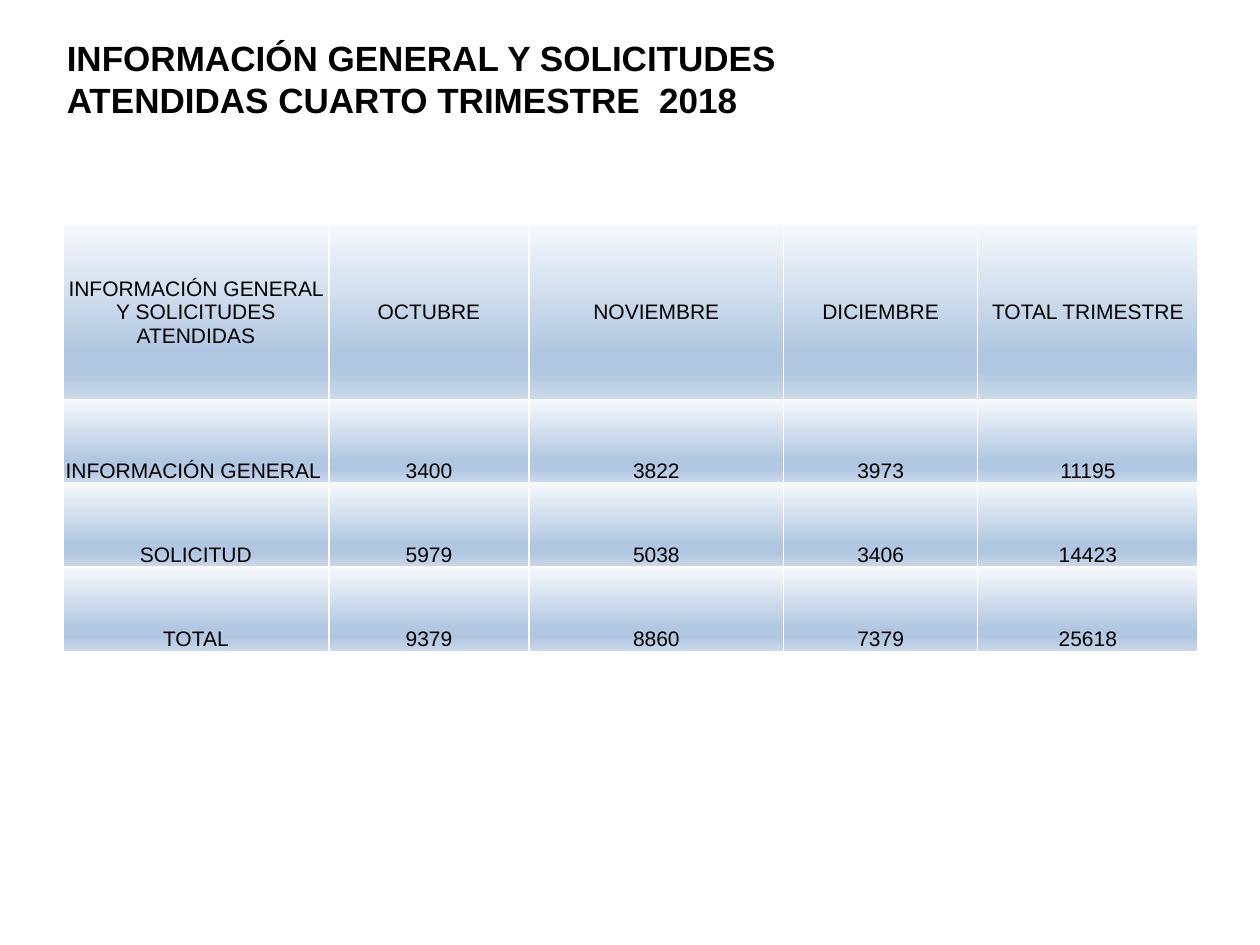
from copy import deepcopy

from pptx import Presentation
from pptx.dml.color import RGBColor
from pptx.enum.text import MSO_ANCHOR, PP_ALIGN
from pptx.oxml import parse_xml
from pptx.oxml.ns import nsdecls, qn
from pptx.util import Inches, Pt

LEFT, CENTER = PP_ALIGN.LEFT, PP_ALIGN.CENTER
MIDDLE, BOTTOM = MSO_ANCHOR.MIDDLE, MSO_ANCHOR.BOTTOM

COLORS = {"text": "000000", "line": "FFFFFF", "top": "F6F9FC",
          "mid": "B0C6E1", "base": "CAD9EB"}
STOPS = [(0, "top"), (74, "mid"), (83, "mid"), (100, "base")]
WIDTHS = [2.11, 1.59, 2.02, 1.54, 1.75]
HEIGHTS = [1.39, 0.66, 0.67, 0.67]
ROWS = [
    ["INFORMACIÓN GENERAL Y SOLICITUDES ATENDIDAS", "OCTUBRE", "NOVIEMBRE",
     "DICIEMBRE", "TOTAL TRIMESTRE"],
    ["INFORMACIÓN GENERAL ", "3400", "3822", "3973", "11195"],
    ["SOLICITUD", "5979", "5038", "3406", "14423"],
    ["TOTAL", "9379", "8860", "7379", "25618"],
]


def style(para, size, align, bold=False):
    para.alignment = align
    for run in para.runs:
        font = run.font
        font.name, font.size, font.bold = "Arial", Pt(size), bold
        font.color.rgb = RGBColor.from_string(COLORS["text"])


def paint(cell):
    """Give the cell white borders and a downward gradient."""
    props = cell._tc.get_or_add_tcPr()
    for side in ("lnL", "lnR", "lnT", "lnB"):
        props.append(parse_xml(
            f'<a:{side} {nsdecls("a")} w="{Pt(1)}"><a:solidFill>'
            f'<a:srgbClr val="{COLORS["line"]}"/></a:solidFill></a:{side}>'))
    stops = "".join(
        f'<a:gs pos="{pos * 1000}"><a:srgbClr val="{COLORS[name]}"/></a:gs>'
        for pos, name in STOPS)
    props.append(parse_xml(
        f'<a:gradFill {nsdecls("a")} rotWithShape="1"><a:gsLst>{stops}</a:gsLst>'
        '<a:lin ang="5400000" scaled="0"/></a:gradFill>'))


prs = Presentation()
prs.slide_width, prs.slide_height = Inches(10), Inches(7.5)
slide = prs.slides.add_slide(prs.slide_layouts[5])

title = slide.shapes.title
title.left, title.top = Inches(0.43), Inches(0)
title.width, title.height = Inches(8.84), Inches(1.25)
title.text_frame.vertical_anchor = MIDDLE
head = title.text_frame.paragraphs[0]
head.text = "INFORMACIÓN GENERAL Y SOLICITUDES\nATENDIDAS CUARTO TRIMESTRE  2018"
style(head, 20, LEFT, bold=True)
# The line break needs the run size too, or it makes the first line taller
head._p.find(qn("a:br")).append(deepcopy(head.runs[0]._r.rPr))

table = slide.shapes.add_table(
    len(ROWS), len(WIDTHS), Inches(0.5), Inches(1.78),
    Inches(sum(WIDTHS)), Inches(sum(HEIGHTS))).table
for col, width in zip(table.columns, WIDTHS):
    col.width = Inches(width)
for r, (height, texts) in enumerate(zip(HEIGHTS, ROWS)):
    table.rows[r].height = Inches(height)
    for c, text in enumerate(texts):
        cell = table.cell(r, c)
        cell.margin_left = cell.margin_right = cell.margin_top = Inches(0.01)
        cell.margin_bottom = Inches(0)
        cell.vertical_anchor = BOTTOM if r else MIDDLE
        para = cell.text_frame.paragraphs[0]
        para.text = text
        style(para, 12, CENTER)
        paint(cell)

prs.save("out.pptx")
